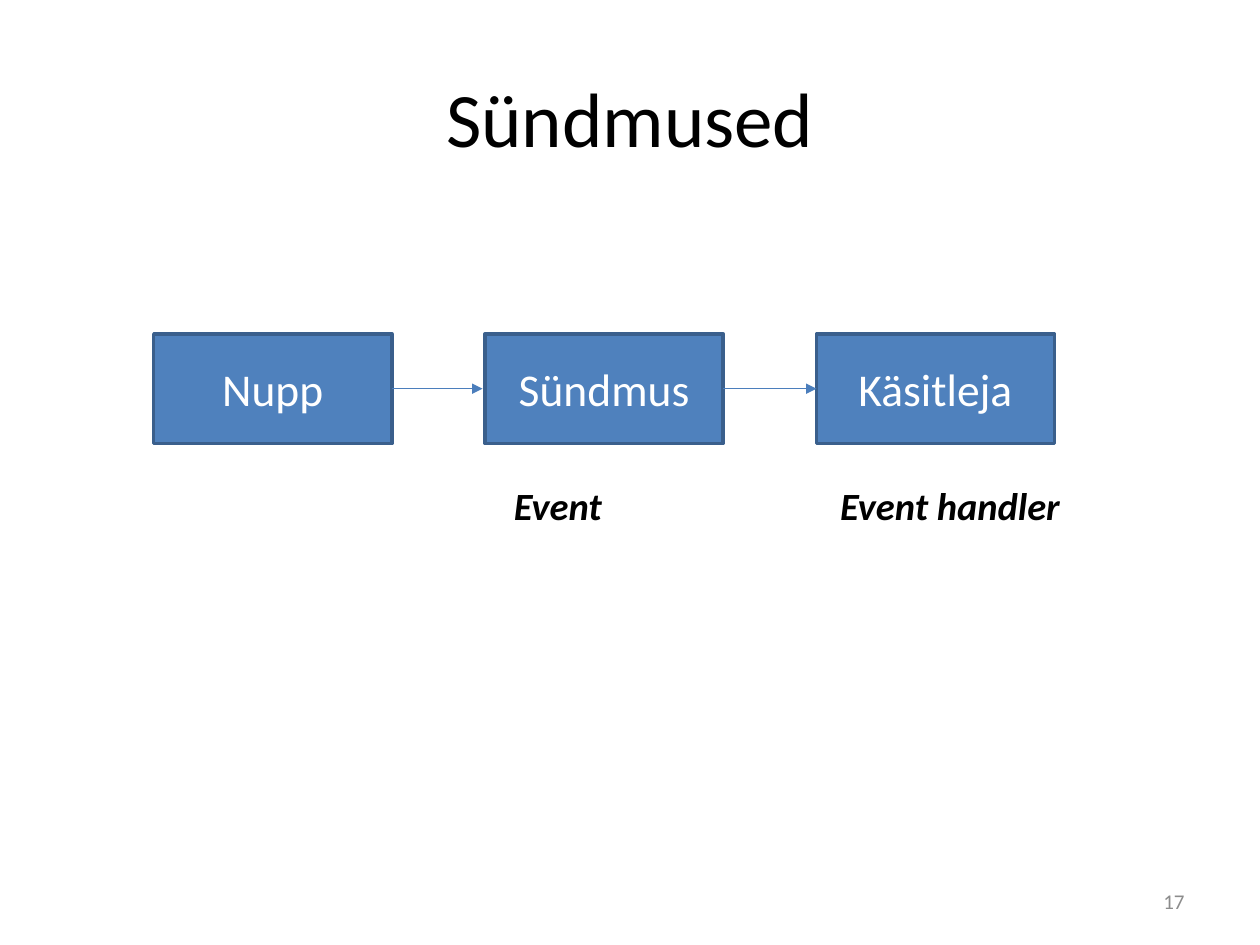
"""Builds the slide on events: a button, its event and the event handler."""
from lxml import etree
from pptx import Presentation
from pptx import util as u
from pptx.dml.color import RGBColor
from pptx.enum import shapes, text
from pptx.oxml.ns import qn

COLORS = {"box": "4F81BD", "border": "3A5F8C", "arrow": "4B7EBC",
          "ink": "000000", "light": "FFFFFF", "number": "8C8C8C"}
LEFT, TOP, WIDTH, HEIGHT, STEP = 1.22, 2.65, 1.89, 0.87, 2.63
CAPTION_TOP, CAPTION_HEIGHT = 3.78, 0.47


def write(shape, content, size, color="ink", align="LEFT", anchor="MIDDLE", strong=False):
    frame = shape.text_frame
    frame.word_wrap = True
    frame.vertical_anchor = getattr(text.MSO_ANCHOR, anchor)
    paragraph = frame.paragraphs[0]
    paragraph.alignment = getattr(text.PP_ALIGN, align)
    run = paragraph.add_run()
    run.text = content
    run.font.name = "Calibri"
    run.font.size = u.Pt(size)
    run.font.bold = run.font.italic = strong
    run.font.color.rgb = RGBColor.from_string(COLORS[color])


def area(*lengths):
    return [u.Inches(length) for length in lengths]


presentation = Presentation()
presentation.slide_width, presentation.slide_height = area(10, 7.5)
slide = presentation.slides.add_slide(presentation.slide_layouts[5])

title = slide.shapes.title
title.left, title.top, title.width, title.height = area(0.5, 0.3, 9, 1.25)
write(title, "Sündmused", 44, align="CENTER")

number = slide.shapes.add_textbox(*area(7.17, 6.95, 2.33, 0.4))
write(number, "17", 12, color="number", align="RIGHT")

for column, label in enumerate(["Nupp", "Sündmus", "Käsitleja"]):
    box = slide.shapes.add_shape(shapes.MSO_SHAPE.RECTANGLE,
                                 *area(LEFT + column * STEP, TOP, WIDTH, HEIGHT))
    box.shadow.inherit = False
    box.fill.solid()
    box.fill.fore_color.rgb = RGBColor.from_string(COLORS["box"])
    box.line.color.rgb = RGBColor.from_string(COLORS["border"])
    box.line.width = u.Pt(2)
    write(box, label, 26, color="light", align="CENTER")

middle = TOP + HEIGHT / 2
for column, gap in enumerate([0.02, 0]):
    start = LEFT + column * STEP + WIDTH
    end = LEFT + (column + 1) * STEP - gap
    arrow = slide.shapes.add_connector(shapes.MSO_CONNECTOR.STRAIGHT,
                                       *area(start, middle, end, middle))
    arrow.line.color.rgb = RGBColor.from_string(COLORS["arrow"])
    arrow.line.width = u.Pt(0.75)
    etree.SubElement(arrow.line._get_or_add_ln(), qn("a:tailEnd"), type="triangle")
    etree.SubElement(arrow._element.spPr, qn("a:effectLst"))

for label, left, width in [("Event", 3.98, 1.42), ("Event handler", 6.57, 2.13)]:
    caption = slide.shapes.add_textbox(*area(left, CAPTION_TOP, width, CAPTION_HEIGHT))
    write(caption, label, 22, anchor="TOP", strong=True)
    caption.text_frame.auto_size = text.MSO_AUTO_SIZE.SHAPE_TO_FIT_TEXT

presentation.save("out.pptx")
